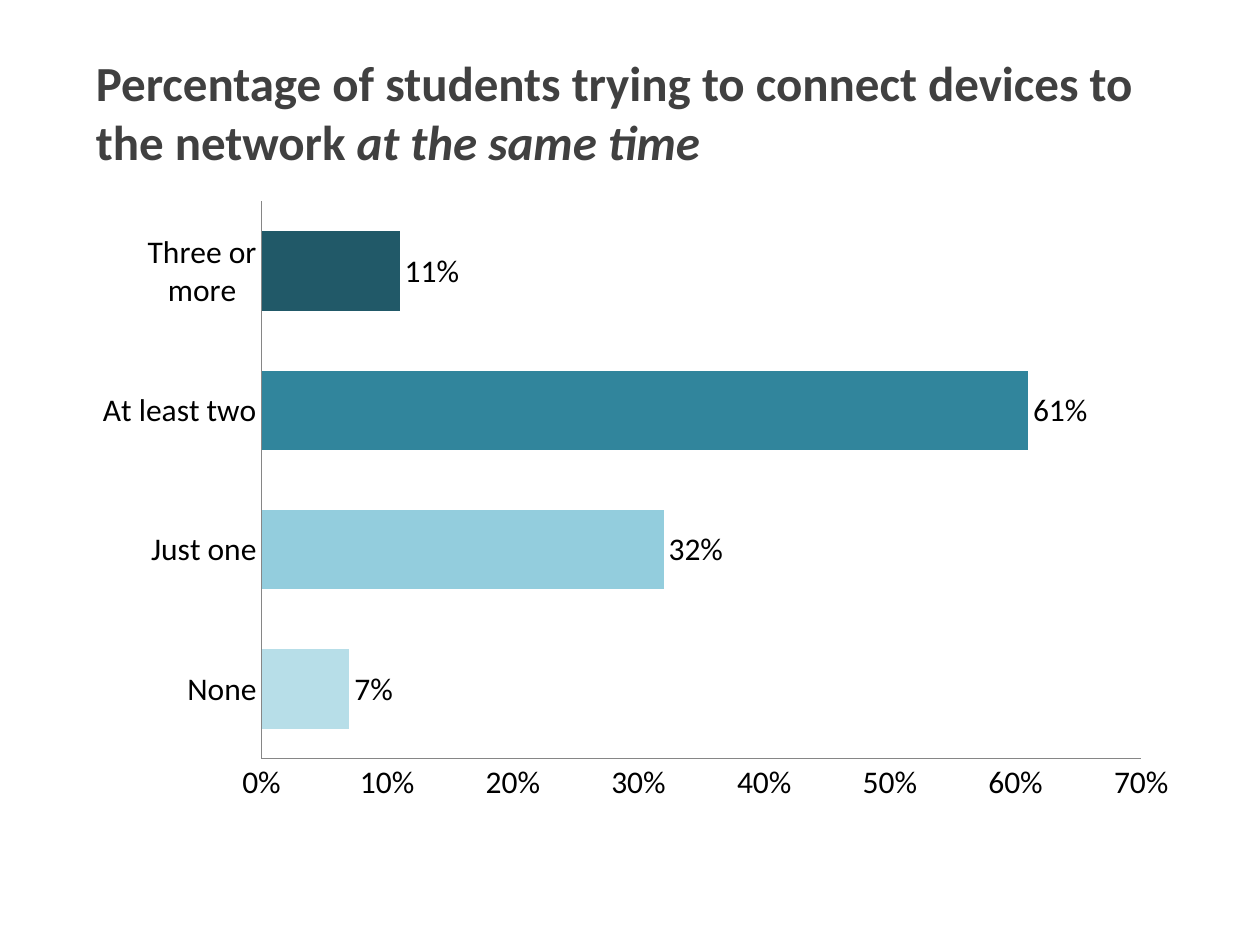
import dataclasses

import lxml.etree
import pptx
import pptx.chart.data
import pptx.dml.color
import pptx.enum.chart
import pptx.enum.text
import pptx.oxml.ns
import pptx.util

Cm = pptx.util.Cm
Pt = pptx.util.Pt
RGB = pptx.dml.color.RGBColor.from_string


@dataclasses.dataclass(frozen=True)
class Theme:
    font: str = "Calibri"
    title_size: int = 28
    chart_size: int = 18
    title_color: str = "404040"
    text_color: str = "000000"
    axis_color: str = "868686"
    bar_colors: tuple = ("B7DEE8", "93CDDD", "31859C", "215968")


class SlideBuilder:
    def __init__(self, slide, theme):
        self.s = slide
        self.theme = theme

    def title(self, box, runs):
        """Fill the title from (text, italic) pairs."""
        sp = self.s.shapes.title
        sp.left, sp.top, sp.width, sp.height = box
        tf = sp.text_frame
        tf.word_wrap = True
        tf.auto_size = pptx.enum.text.MSO_AUTO_SIZE.NONE
        tf.vertical_anchor = pptx.enum.text.MSO_ANCHOR.TOP
        p = tf.paragraphs[0]
        p.alignment = pptx.enum.text.PP_ALIGN.LEFT
        for text, italic in runs:
            r = p.add_run()
            r.text = text
            r.font.name = self.theme.font
            r.font.size = Pt(self.theme.title_size)
            r.font.bold = True
            r.font.italic = italic
            r.font.color.rgb = RGB(self.theme.title_color)

    def bar_chart(self, box, shares, plot_box):
        data = pptx.chart.data.CategoryChartData(number_format="0%")
        data.categories = list(shares)
        data.add_series("Series 1", list(shares.values()))
        kind = pptx.enum.chart.XL_CHART_TYPE.BAR_CLUSTERED
        chart = self.s.shapes.add_chart(kind, *box, data).chart
        chart.has_legend = False
        chart.has_title = False
        chart.font.name = self.theme.font
        chart.font.size = Pt(self.theme.chart_size)
        chart.font.color.rgb = RGB(self.theme.text_color)

        plot = chart.plots[0]
        plot.gap_width = 75
        plot.vary_by_categories = False
        plot.has_data_labels = True
        labels = plot.data_labels
        labels.show_value = True
        labels.number_format = "0%"
        labels.number_format_is_linked = False
        labels.position = pptx.enum.chart.XL_LABEL_POSITION.OUTSIDE_END
        for i, color in enumerate(self.theme.bar_colors):
            fill = plot.series[0].points[i].format.fill
            fill.solid()
            fill.fore_color.rgb = RGB(color)

        for axis in (chart.category_axis, chart.value_axis):
            axis.has_major_gridlines = False
            axis.major_tick_mark = pptx.enum.chart.XL_TICK_MARK.NONE
            axis.minor_tick_mark = pptx.enum.chart.XL_TICK_MARK.NONE
            axis.format.line.color.rgb = RGB(self.theme.axis_color)
            axis.format.line.width = Pt(0.75)
        axis = chart.value_axis
        axis.minimum_scale, axis.maximum_scale, axis.major_unit = 0, 0.7, 0.1
        axis.tick_labels.number_format = "0%"
        axis.tick_labels.number_format_is_linked = False
        self.place_plot(chart, plot_box)

    def place_plot(self, chart, plot_box):
        """Fix the inner plot area as x, y, w, h fractions of the chart."""
        qn = pptx.oxml.ns.qn
        area = chart.plots[0]._element.getparent()
        for old in area.findall(qn("c:layout")):
            area.remove(old)
        layout = lxml.etree.Element(qn("c:layout"))
        area.insert(0, layout)
        manual = lxml.etree.SubElement(layout, qn("c:manualLayout"))
        settings = [("layoutTarget", "inner"), ("xMode", "edge"), ("yMode", "edge")]
        settings += zip("xywh", plot_box)
        for name, value in settings:
            lxml.etree.SubElement(manual, qn(f"c:{name}")).set("val", str(value))


def main():
    prs = pptx.Presentation()
    prs.slide_width, prs.slide_height = Cm(25.4), Cm(19.05)
    title_only = prs.slide_layouts[5]
    builder = SlideBuilder(prs.slides.add_slide(title_only), Theme())
    left = Cm(1.68)
    builder.title(
        (left, Cm(0.94), Cm(22.28), Cm(2.03)),
        [
            ("Percentage of students trying to connect devices to the network ", False),
            ("at the same time", True),
        ],
    )
    builder.bar_chart(
        (left, Cm(3.81), Cm(22.45), Cm(12.62)),
        {"None": 0.07, "Just one": 0.32, "At least two": 0.61, "Three or more": 0.11},
        plot_box=(0.16, 0.02, 0.79, 0.89),
    )
    prs.save("out.pptx")


if __name__ == "__main__":
    main()
